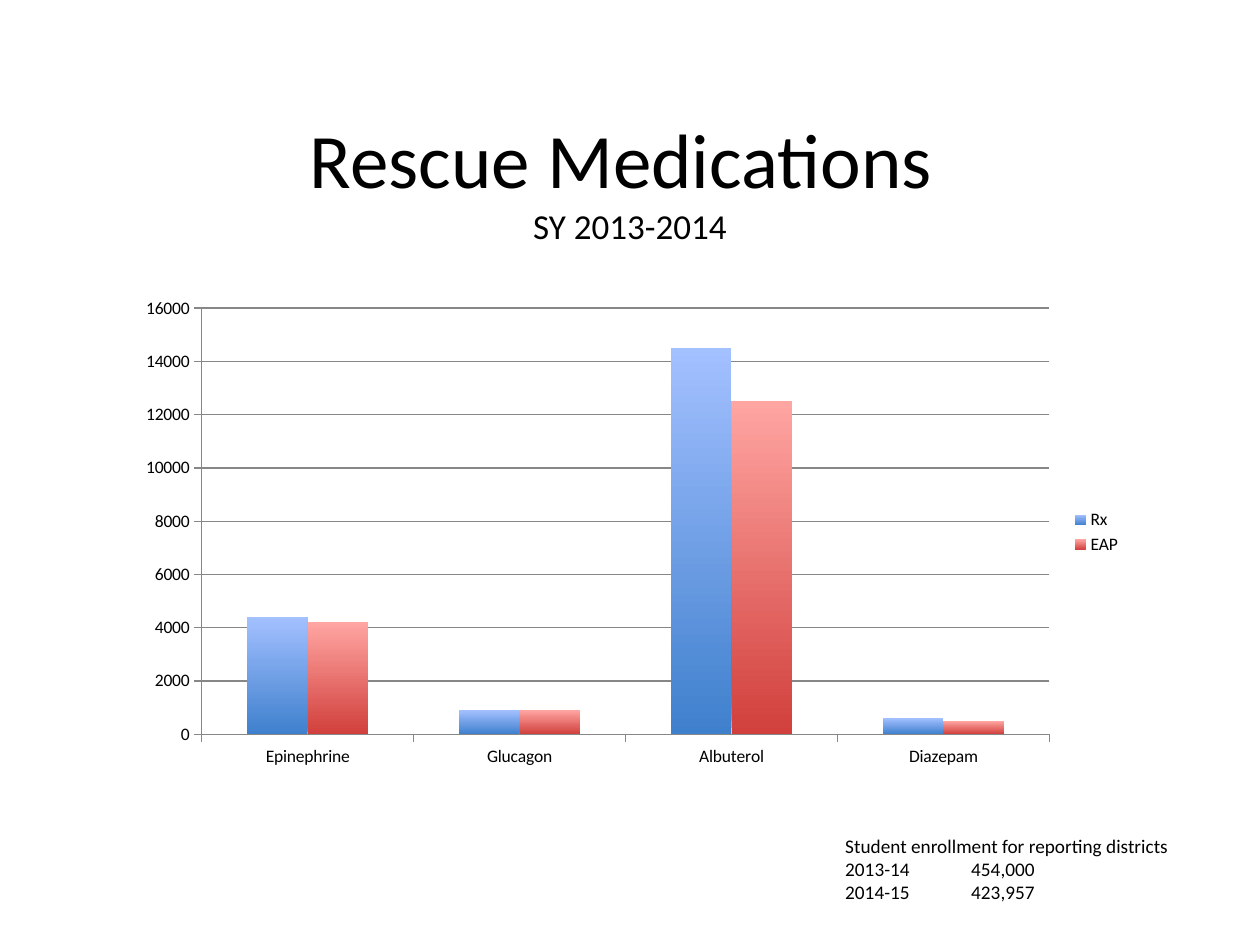
from pptx import Presentation
from pptx.chart.data import CategoryChartData
from pptx.dml.color import RGBColor
from pptx.enum.chart import XL_CHART_TYPE as ChartType
from pptx.enum.chart import XL_LEGEND_POSITION as LegendPosition
from pptx.enum.chart import XL_TICK_MARK as TickMark
from pptx.enum.text import MSO_ANCHOR as Anchor
from pptx.enum.text import PP_ALIGN as Align
from pptx.util import Inches, Pt

FONT = "Calibri"
BLACK = "000000"
AXIS_GRAY = "878787"

CATEGORIES = ["Epinephrine", "Glucagon", "Albuterol", "Diazepam"]
# Name, values, bottom colour, top colour
SERIES = [
    ("Rx", [4400, 900, 14500, 600], "3F80CD", "A3C0FF"),
    ("EAP", [4200, 900, 12500, 500], "D1403C", "FFA5A2"),
]


def color(value):
    return RGBColor.from_string(value)


def style_font(font, size):
    font.name = FONT
    font.size = Pt(size)
    font.color.rgb = color(BLACK)


def add_span(para, text, size):
    span = para.add_run()
    span.text = text
    style_font(span.font, size)


def add_box(page, left, top, width, height, anchor=Anchor.TOP, wrap=True):
    box = page.shapes.add_textbox(
        Inches(left), Inches(top), Inches(width), Inches(height))
    box.text_frame.word_wrap = wrap
    box.text_frame.vertical_anchor = anchor
    return box.text_frame


def add_title(page):
    frame = add_box(page, 1, 0.79, 8, 1.26, anchor=Anchor.MIDDLE)
    para = frame.paragraphs[0]
    para.alignment = Align.CENTER
    add_span(para, "Rescue Medications ", 44)
    para.add_line_break()
    add_span(para, "SY 2013-2014", 20)


def add_lines(page, lines, left, top, width, height, size):
    frame = add_box(page, left, top, width, height, wrap=False)
    for index, line in enumerate(lines):
        para = frame.add_paragraph() if index else frame.paragraphs[0]
        add_span(para, line, size)


def style_axis(axis):
    axis.major_tick_mark = TickMark.OUTSIDE
    axis.minor_tick_mark = TickMark.NONE
    axis.format.line.color.rgb = color(AXIS_GRAY)
    axis.format.line.width = Pt(0.75)


def fill_gradient(fill, bottom, top):
    fill.gradient()
    fill.gradient_angle = 90
    for stop, value in zip(fill.gradient_stops, (bottom, top)):
        stop.color.rgb = color(value)


def add_medication_chart(page):
    data = CategoryChartData()
    data.categories = CATEGORIES
    for name, values, _, _ in SERIES:
        data.add_series(name, values)
    chart = page.shapes.add_chart(
        ChartType.COLUMN_CLUSTERED,
        Inches(1), Inches(2.29), Inches(8), Inches(3.87), data).chart
    chart.has_title = False
    style_font(chart.font, 10)

    # Legend
    chart.has_legend = True
    chart.legend.position = LegendPosition.RIGHT
    chart.legend.include_in_layout = False

    # Axes and gridlines
    style_axis(chart.category_axis)
    value_axis = chart.value_axis
    style_axis(value_axis)
    value_axis.minimum_scale = 0
    value_axis.maximum_scale = 16000
    value_axis.major_unit = 2000
    value_axis.has_major_gridlines = True
    grid_line = value_axis.major_gridlines.format.line
    grid_line.color.rgb = color(AXIS_GRAY)
    grid_line.width = Pt(0.75)

    # Columns
    plot = chart.plots[0]
    plot.gap_width = 150
    plot.overlap = 0
    plot.vary_by_categories = False
    for series, (_, _, bottom, top) in zip(plot.series, SERIES):
        fill_gradient(series.format.fill, bottom, top)


def main():
    deck = Presentation()
    deck.slide_width = Inches(10)
    deck.slide_height = Inches(7.5)
    page = deck.slides.add_slide(deck.slide_layouts[6])

    add_title(page)
    add_medication_chart(page)

    # Enrollment note
    enrollment = [
        "Student enrollment for reporting districts",
        "2013-14\t454,000",
        "2014-15\t423,957",
    ]
    add_lines(page, enrollment, 6.61, 6.57, 2.94, 0.66, size=11)

    deck.save("out.pptx")


if __name__ == "__main__":
    main()
